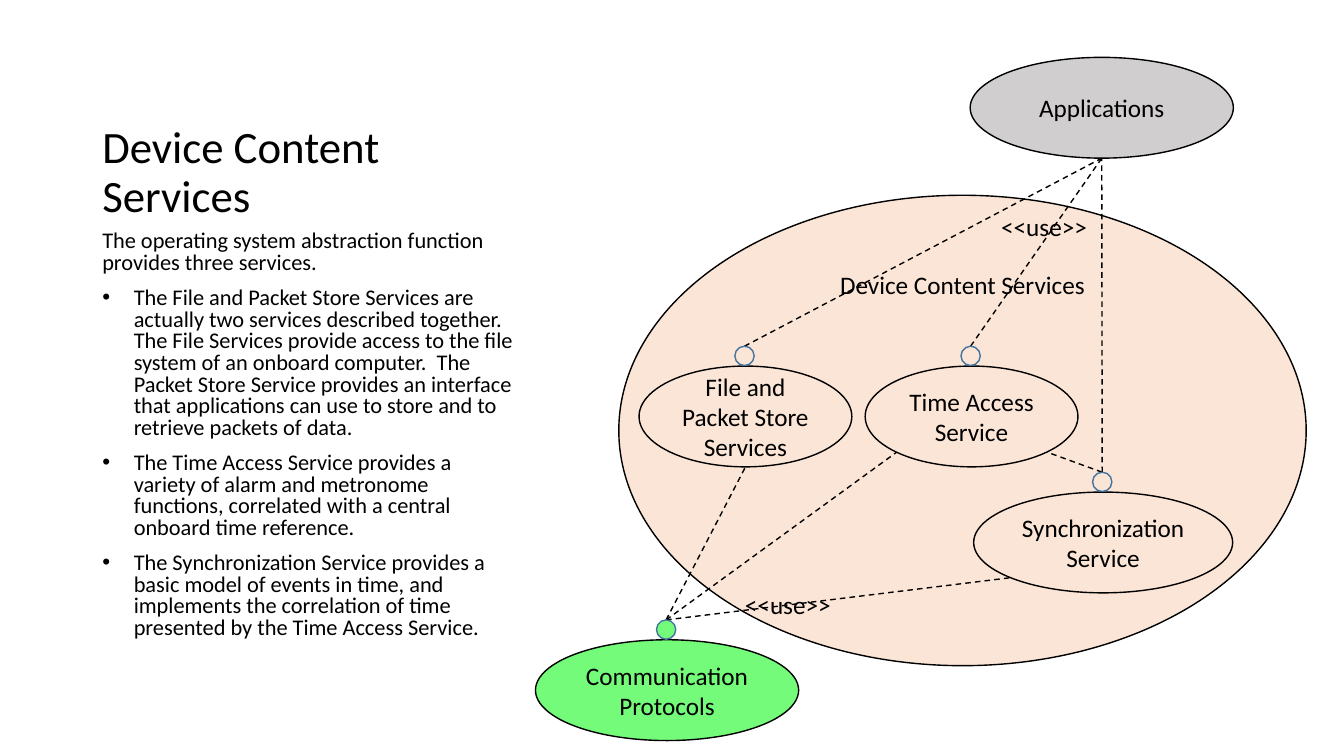
from dataclasses import dataclass
from typing import Optional

import pptx
import pptx.dml.color
import pptx.enum.dml
import pptx.enum.shapes
import pptx.enum.text
import pptx.oxml
import pptx.util
from lxml import etree

Pt = pptx.util.Pt
RGBColor = pptx.dml.color.RGBColor
Align = pptx.enum.text.PP_ALIGN
Anchor = pptx.enum.text.MSO_ANCHOR

BLACK = RGBColor(0x00, 0x00, 0x00)
PEACH = RGBColor(0xFB, 0xE5, 0xD6)
GREY = RGBColor(0xD0, 0xCE, 0xCE)
GREEN = RGBColor(0x73, 0xFB, 0x79)
PORT_BLUE = RGBColor(0x43, 0x73, 0x9E)

FONT = "Calibri"
PORT_SIZE = 13.8
PORT_RISE = 14.2
BULLET_INDENT = 22.5


@dataclass(frozen=True)
class Oval:
    text: str
    left: float
    top: float
    width: float
    height: float = 72
    fill: RGBColor = PEACH
    outline: RGBColor = BLACK
    anchor: Anchor = Anchor.MIDDLE

    @property
    def center(self) -> float:
        return self.left + self.width / 2

    @property
    def bottom(self) -> tuple[float, float]:
        return self.center, self.top + self.height

    @property
    def port(self) -> "Oval":
        """The small interface circle resting on top of the oval."""
        return Oval("", self.center - 0.7 - PORT_SIZE / 2, self.top - PORT_RISE,
                    PORT_SIZE, PORT_SIZE, self.fill, PORT_BLUE)

    @property
    def port_top(self) -> tuple[float, float]:
        return self.port.center, self.port.top


def write(frame, text: str, *, size: float = 18, align: Optional[Align] = None,
          anchor: Anchor = Anchor.TOP, wrap: bool = True,
          line_spacing: Optional[float] = None, space_before: Optional[float] = None,
          bulleted_from: Optional[int] = None) -> None:
    """Fill a text frame, one paragraph for each line of text."""
    frame.word_wrap = wrap
    frame.vertical_anchor = anchor
    for index, line in enumerate(text.split("\n")):
        paragraph = frame.paragraphs[0] if index == 0 else frame.add_paragraph()
        paragraph.text = line
        paragraph.alignment = align
        paragraph.line_spacing = line_spacing
        if space_before is not None:
            paragraph.space_before = Pt(space_before)
        for run in paragraph.runs:
            run.font.name = FONT
            run.font.size = Pt(size)
            run.font.color.rgb = BLACK
        if bulleted_from is not None and index >= bulleted_from:
            properties = paragraph._p.get_or_add_pPr()
            properties.set("marL", str(Pt(BULLET_INDENT)))
            properties.set("indent", str(-Pt(BULLET_INDENT)))
            bullet_font = etree.SubElement(properties, pptx.oxml.ns.qn("a:buFont"))
            bullet_font.set("typeface", "Arial")
            bullet = etree.SubElement(properties, pptx.oxml.ns.qn("a:buChar"))
            bullet.set("char", "•")


def add_text(slide, text: str, left: float, top: float, width: float, height: float,
             **text_format):
    box = slide.shapes.add_textbox(Pt(left), Pt(top), Pt(width), Pt(height))
    write(box.text_frame, text, **text_format)


def add_oval(slide, oval: Oval) -> None:
    shape = slide.shapes.add_shape(pptx.enum.shapes.MSO_SHAPE.OVAL, Pt(oval.left),
                                   Pt(oval.top), Pt(oval.width), Pt(oval.height))
    shape.shadow.inherit = False
    shape.fill.solid()
    shape.fill.fore_color.rgb = oval.fill
    shape.line.color.rgb = oval.outline
    shape.line.width = Pt(1)
    if oval.text:
        write(shape.text_frame, oval.text, align=Align.CENTER, anchor=oval.anchor)


def add_use_line(slide, start: tuple[float, float], end: tuple[float, float]) -> None:
    line = slide.shapes.add_connector(pptx.enum.shapes.MSO_CONNECTOR.STRAIGHT,
                                      *(Pt(value) for value in start + end))
    line.line.color.rgb = BLACK
    line.line.width = Pt(1)
    line.line.dash_style = pptx.enum.dml.MSO_LINE.DASH
    etree.SubElement(line._element.spPr, pptx.oxml.ns.qn("a:effectLst"))


# Content
TITLE = "Device Content Services"
DESCRIPTION = "\n".join([
    "The operating system abstraction function provides three services.",
    "The File and Packet Store Services are actually two services described together.  "
    "The File Services provide access to the file system of an onboard computer.  "
    "The Packet Store Service provides an interface that applications can use to store "
    "and to retrieve packets of data.",
    "The Time Access Service provides a variety of alarm and metronome functions, "
    "correlated with a central onboard time reference.",
    "The Synchronization Service provides a basic model of events in time, and "
    "implements the correlation of time presented by the Time Access Service.",
])

DEVICE_CONTENT = Oval(TITLE, 442, 139.5, 491, 336, anchor=Anchor.TOP)
APPLICATIONS = Oval("Applications", 693, 41, 188, fill=GREY)
PROTOCOLS = Oval("Communication\vProtocols", 382.5, 457, 188, fill=GREEN)
FILE_STORE = Oval("File and Packet Store Services", 456.5, 261.5, 152)
TIME_ACCESS = Oval("Time Access Service", 618, 261.5, 152)
SYNCHRONIZATION = Oval("Synchronization Service", 695.5, 351.5, 185)

USE_LINES = [
    (FILE_STORE.port_top, APPLICATIONS.bottom),
    (TIME_ACCESS.port_top, APPLICATIONS.bottom),
    (SYNCHRONIZATION.port_top, APPLICATIONS.bottom),
    (SYNCHRONIZATION.port_top, (748, 323)),
    (PROTOCOLS.port_top, FILE_STORE.bottom),
    (PROTOCOLS.port_top, (640.5, 323)),
    (PROTOCOLS.port_top, (723, 412.5)),
]
USE_LABELS = [(708, 147.5), (525, 417.5)]


def main() -> None:
    presentation = pptx.Presentation()
    presentation.slide_width = Pt(960)
    presentation.slide_height = Pt(540)
    slide = presentation.slides.add_slide(presentation.slide_layouts[6])

    # Title and description
    add_text(slide, TITLE, 66, 36, 310, 126, size=32, anchor=Anchor.BOTTOM,
             line_spacing=0.9)
    add_text(slide, DESCRIPTION, 66, 162, 310, 300, size=16, line_spacing=0.8,
             space_before=10, bulleted_from=1)

    # Surrounding function and its user
    add_oval(slide, DEVICE_CONTENT)
    add_oval(slide, APPLICATIONS)

    # Use relations
    for start, end in USE_LINES:
        add_use_line(slide, start, end)
    for left, top in USE_LABELS:
        add_text(slide, "<<use>>", left, top, 76, 29, wrap=False)

    # Services with their interfaces
    for service in (PROTOCOLS, FILE_STORE, TIME_ACCESS, SYNCHRONIZATION):
        add_oval(slide, service)
        add_oval(slide, service.port)

    presentation.save("out.pptx")


if __name__ == "__main__":
    main()
